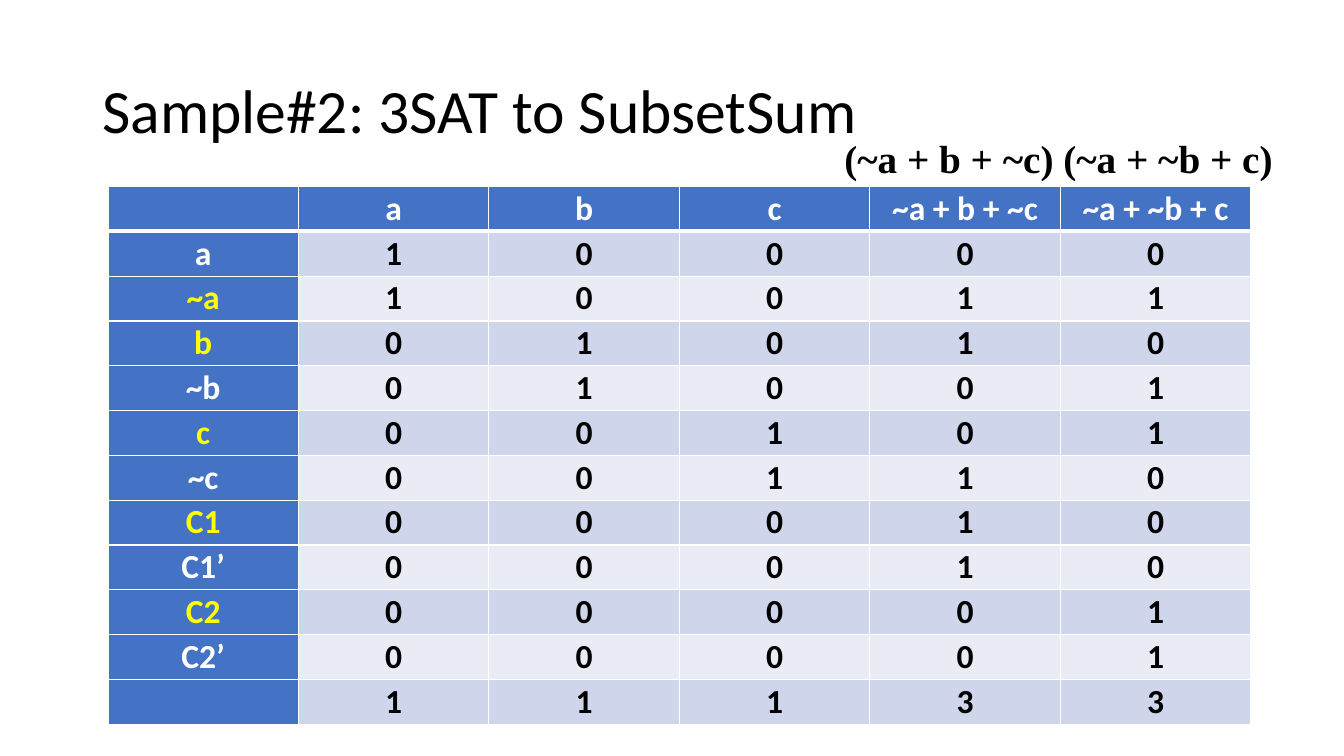
from lxml import etree
from pptx import Presentation
from pptx.dml.color import RGBColor
from pptx.enum.text import MSO_ANCHOR, MSO_AUTO_SIZE, PP_ALIGN
from pptx.oxml.ns import qn
from pptx.util import Cm, Pt

MIDDLE = MSO_ANCHOR.MIDDLE
TOP = MSO_ANCHOR.TOP
CENTER = PP_ALIGN.CENTER
FIT_SHAPE = MSO_AUTO_SIZE.SHAPE_TO_FIT_TEXT
BLANK_LAYOUT = 6

COLORS = {
    "text": "000000",
    "white": "FFFFFF",
    "chosen": "FFFF00",
    "header": "4472C4",
    "odd_row": "CFD5EA",
    "even_row": "E9EBF5",
}

COLUMN_WIDTH = Cm(4.8)
ROW_HEIGHT = Cm(1.13)

HEADINGS = ["", "a", "b", "c", "~a + b + ~c", "~a + ~b + c"]
# Row label and its digits, one per column
NUMBERS = [
    ("a", "10000"),
    ("~a", "10011"),
    ("b", "01010"),
    ("~b", "01001"),
    ("c", "00101"),
    ("~c", "00110"),
    ("C1", "00010"),
    ("C1’", "00010"),
    ("C2", "00001"),
    ("C2’", "00001"),
    ("", "11133"),
]
CHOSEN_LABELS = {"~a", "b", "c", "C1", "C2"}


def set_attributes(target, values):
    for name, value in values.items():
        setattr(target, name, value)


def format_font(font, color, **values):
    set_attributes(font, values)
    font.color.rgb = RGBColor.from_string(COLORS[color])


def add_text(slide, text, box, frame_format, font_format, line_spacing=1.0):
    frame = slide.shapes.add_textbox(*map(Cm, box)).text_frame
    set_attributes(frame, frame_format)
    paragraph = frame.paragraphs[0]
    paragraph.line_spacing = line_spacing
    run = paragraph.add_run()
    run.text = text
    format_font(run.font, "text", **font_format)


def set_borders(cell, widths):
    properties = cell._tc.get_or_add_tcPr()
    for position, (side, width) in enumerate(widths.items()):
        line = etree.Element(qn(f"a:ln{side}"), w=str(Pt(width)))
        fill = etree.SubElement(line, qn("a:solidFill"))
        etree.SubElement(fill, qn("a:srgbClr"), val=COLORS["white"])
        properties.insert(position, line)


def fill_cell(cell, text, fill, color, borders):
    set_attributes(cell, {
        "vertical_anchor": MIDDLE,
        "margin_left": Cm(0.18),
        "margin_right": Cm(0.18),
        "margin_top": 0,
        "margin_bottom": 0,
    })
    cell.fill.solid()
    cell.fill.fore_color.rgb = RGBColor.from_string(COLORS[fill])
    set_borders(cell, borders)
    paragraph = cell.text_frame.paragraphs[0]
    paragraph.alignment = CENTER
    if text:
        run = paragraph.add_run()
        run.text = text
        format_font(run.font, color, name="Calibri", size=Pt(24), bold=True)


def add_number_table(slide, left, top):
    rows = [HEADINGS] + [[label, *digits] for label, digits in NUMBERS]
    table = slide.shapes.add_table(
        len(rows), len(HEADINGS), left, top,
        COLUMN_WIDTH * len(HEADINGS), ROW_HEIGHT * len(rows)).table
    for column in table.columns:
        column.width = COLUMN_WIDTH
    for row_index, row in enumerate(rows):
        table.rows[row_index].height = ROW_HEIGHT
        # The rule under the headings is thicker than the others
        borders = {"L": 1, "R": 1, "T": 3 if row_index == 1 else 1,
                   "B": 3 if row_index == 0 else 1}
        for column_index, text in enumerate(row):
            if row_index == 0:
                fill, color = "header", "white"
            elif column_index == 0:
                fill = "header"
                color = "chosen" if text in CHOSEN_LABELS else "white"
            else:
                fill = "odd_row" if row_index % 2 else "even_row"
                color = "text"
            fill_cell(table.cell(row_index, column_index),
                      text, fill, color, borders)


def main():
    presentation = Presentation()
    presentation.slide_width = Cm(33.87)
    presentation.slide_height = Cm(19.05)
    slide = presentation.slides.add_slide(
        presentation.slide_layouts[BLANK_LAYOUT])

    # Title
    add_text(slide, "Sample#2: 3SAT to SubsetSum", (2.33, 1.01, 29.21, 3.68),
             {"word_wrap": True, "vertical_anchor": MIDDLE},
             {"name": "Calibri", "size": Pt(44)}, line_spacing=0.9)

    # Subset sum numbers
    add_number_table(slide, Cm(2.72), Cm(4.7))

    # Formula above the clause columns
    add_text(slide, "(~a + b + ~c) (~a + ~b + c)", (21.03, 3.25, 11.66, 1.45),
             {"word_wrap": False, "auto_size": FIT_SHAPE,
              "vertical_anchor": TOP},
             {"name": "Times New Roman", "size": Pt(28), "bold": True})

    presentation.save("out.pptx")


if __name__ == "__main__":
    main()
